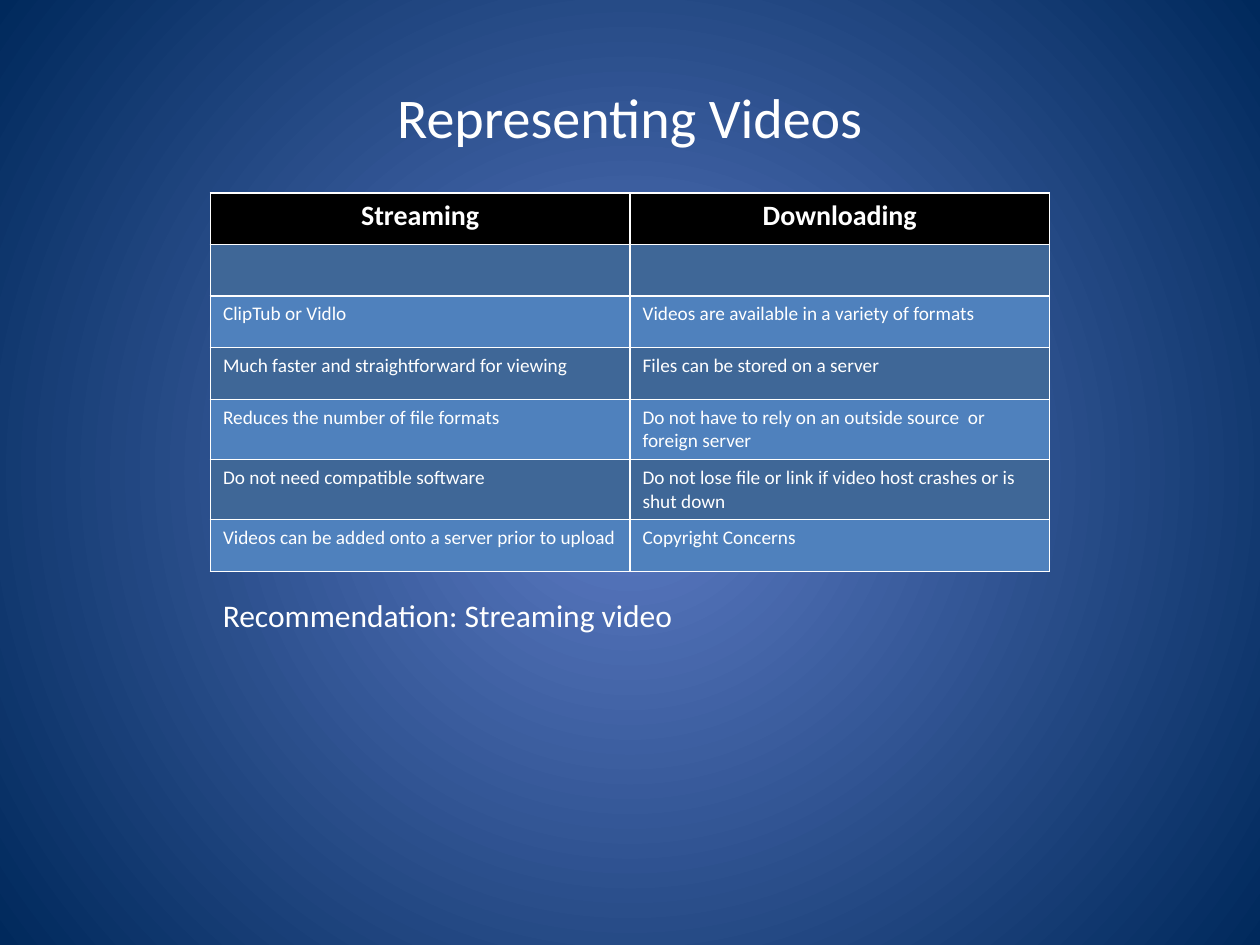
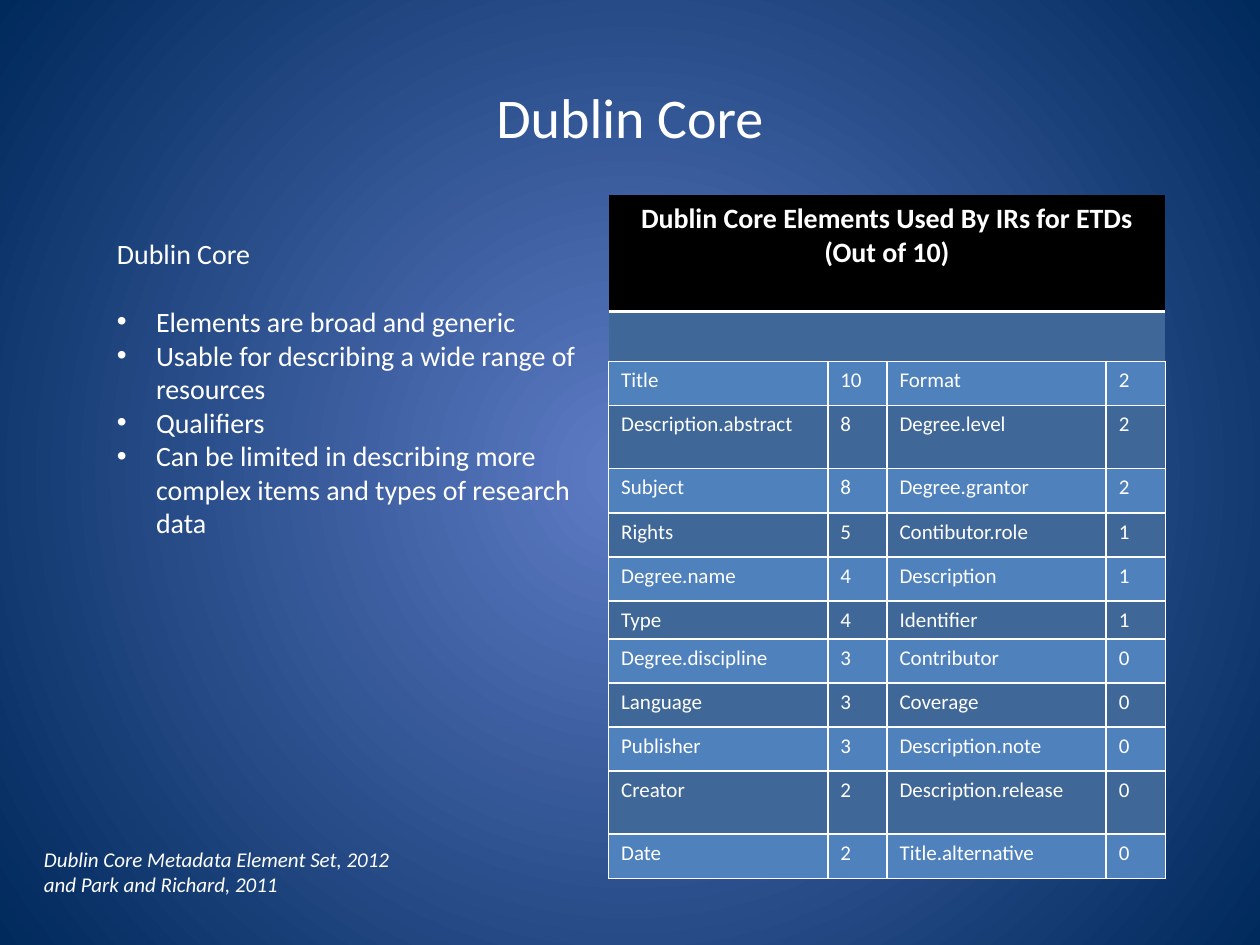
import pptx
import pptx.dml.color
import pptx.enum.text
import pptx.oxml
import pptx.oxml.ns
import pptx.util
from lxml import etree

Inches = pptx.util.Inches
Pt = pptx.util.Pt
RGBColor = pptx.dml.color.RGBColor
qn = pptx.oxml.ns.qn
PP_ALIGN = pptx.enum.text.PP_ALIGN

FONT = "Calibri"
WHITE = RGBColor(0xFF, 0xFF, 0xFF)
HEADER_BLACK = RGBColor(0x00, 0x00, 0x00)
BAND_DARK = RGBColor(0x3F, 0x67, 0x97)
BAND_LIGHT = RGBColor(0x4F, 0x81, 0xBD)
GLOW_CENTRE = RGBColor(0x5E, 0x7C, 0xC5)
GLOW_EDGE = RGBColor(0x00, 0x29, 0x5C)

NO_STYLE = "{2D5ABB26-0587-4C30-8999-92F81FD0307C}"
GRID = {"L": 1, "R": 1, "T": 1, "B": 1}

VIDEO_ROWS = [
    ["Streaming", "Downloading"],
    ["", ""],
    ["ClipTub or Vidlo", "Videos are available in a variety of formats"],
    ["Much faster and straightforward for viewing", "Files can be stored on a server"],
    ["Reduces the number of file formats",
     "Do not have to rely on an outside source  or foreign server"],
    ["Do not need compatible software",
     "Do not lose file or link if video host crashes or is shut down"],
    ["Videos can be added onto a server prior to upload", "Copyright Concerns"],
]

ELEMENT_ROWS = [
    ["Dublin Core Elements Used By IRs for ETDs (Out of 10)", "", "", ""],
    ["", "", "", ""],
    ["Title", "10", "Format", "2"],
    ["Description.abstract", "8", "Degree.level", "2"],
    ["Subject", "8", "Degree.grantor", "2"],
    ["Rights", "5", "Contibutor.role", "1"],
    ["Degree.name", "4", "Description", "1"],
    ["Type", "4", "Identifier", "1"],
    ["Degree.discipline", "3", "Contributor", "0"],
    ["Language", "3", "Coverage", "0"],
    ["Publisher", "3", "Description.note", "0"],
    ["Creator", "2", "Description.release", "0"],
    ["Date", "2", "Title.alternative", "0"],
]
ELEMENT_HEIGHTS = [0.92, 0.37, 0.35, 0.5, 0.35, 0.35, 0.35, 0.28, 0.35, 0.35, 0.35, 0.5, 0.35]

CORE_POINTS = [
    "Elements are broad and generic",
    "Usable for describing a wide range of resources",
    "Qualifiers",
    "Can be limited in describing more complex items and types of research data",
]


def add_run(paragraph, text, size, bold=False, italic=False):
    run = paragraph.add_run()
    run.text = text
    run.font.name = FONT
    run.font.size = Pt(size)
    run.font.bold = bold
    run.font.italic = italic
    run.font.color.rgb = WHITE


def set_background(master):
    """Radial glow shared by every slide."""
    fill = master.background.fill
    fill.gradient()
    for stop, color in zip(fill.gradient_stops, (GLOW_CENTRE, GLOW_EDGE)):
        stop.color.rgb = color
    for stop, position in zip(fill.gradient_stops, (0, 1)):
        stop.position = position
    gradient = master.element.find(".//" + qn("p:bg")).find(".//" + qn("a:gradFill"))
    linear = gradient.find(qn("a:lin"))
    if linear is not None:
        gradient.remove(linear)
    glow = etree.SubElement(gradient, qn("a:path"), {"path": "circle"})
    etree.SubElement(glow, qn("a:fillToRect"), {side: "50000" for side in "ltrb"})


def add_titled_slide(prs, text):
    slide = prs.slides.add_slide(prs.slide_layouts[5])
    title = slide.shapes.title
    title.left, title.top, title.width, title.height = map(Inches, (0.5, 0.3, 9, 1.25))
    title.text_frame.vertical_anchor = pptx.enum.text.MSO_ANCHOR.MIDDLE
    paragraph = title.text_frame.paragraphs[0]
    paragraph.alignment = PP_ALIGN.CENTER
    add_run(paragraph, text, 32)
    return slide


def add_text_frame(slide, box):
    frame = slide.shapes.add_textbox(*map(Inches, box)).text_frame
    frame.word_wrap = True
    frame.auto_size = pptx.enum.text.MSO_AUTO_SIZE.SHAPE_TO_FIT_TEXT
    return frame


def set_borders(cell, widths):
    """White edges of the given point widths; edges not named stay clear."""
    properties = cell._tc.get_or_add_tcPr()
    for side in "LRTB":
        edge = etree.SubElement(properties, qn("a:ln" + side))
        if side in widths:
            edge.set("w", str(Pt(widths[side])))
            paint = etree.SubElement(edge, qn("a:solidFill"))
            etree.SubElement(paint, qn("a:srgbClr"), {"val": str(WHITE)})
        else:
            etree.SubElement(edge, qn("a:noFill"))


def add_banded_table(slide, box, rows, widths, heights, body_size, row_borders=None):
    """Black header, then alternating bands; row_borders overrides the grid by row."""
    table = slide.shapes.add_table(len(rows), len(widths), *map(Inches, box)).table
    table._tbl.tblPr.find(qn("a:tableStyleId")).text = NO_STYLE
    for column, width in zip(table.columns, widths):
        column.width = Inches(width)
    for r, (texts, height) in enumerate(zip(rows, heights)):
        table.rows[r].height = Inches(height)
        is_header = r == 0
        band = HEADER_BLACK if is_header else (BAND_DARK if r % 2 else BAND_LIGHT)
        for c, text in enumerate(texts):
            cell = table.cell(r, c)
            set_borders(cell, (row_borders or {}).get(r, GRID))
            cell.fill.solid()
            cell.fill.fore_color.rgb = band
            if text:
                paragraph = cell.text_frame.paragraphs[0]
                paragraph.alignment = PP_ALIGN.CENTER if is_header else PP_ALIGN.LEFT
                add_run(paragraph, text, 16 if is_header else body_size, bold=is_header)
    return table


def add_core_points(slide, box):
    frame = add_text_frame(slide, box)
    heading = frame.paragraphs[0]
    heading.space_after = Pt(19.5)
    add_run(heading, "Dublin Core", 16)
    for text in CORE_POINTS:
        point = frame.add_paragraph()
        add_run(point, text, 16)
        properties = point._p.get_or_add_pPr()
        properties.set("marL", str(Inches(0.31)))
        properties.set("indent", str(-Inches(0.31)))
        etree.SubElement(properties, qn("a:buFont"), {"typeface": "Arial"})
        etree.SubElement(properties, qn("a:buChar"), {"char": "•"})


def build_videos_slide(prs):
    slide = add_titled_slide(prs, "Representing Videos")
    add_banded_table(slide, (1.67, 1.53, 6.67, 2.96), VIDEO_ROWS,
                     [3.33] * 2, [0.41] * len(VIDEO_ROWS), 11)
    # Recommendation under the table
    recommendation = add_text_frame(slide, (1.67, 4.68, 4.88, 0.4))
    add_run(recommendation.paragraphs[0], "Recommendation: Streaming video", 18)


def build_dublin_core_slide(prs):
    slide = add_titled_slide(prs, "Dublin Core")
    add_core_points(slide, (0.83, 1.83, 3.92, 2.52))
    # Source citation
    citation = add_text_frame(slide, (0.25, 6.67, 3.22, 0.5))
    add_run(citation.paragraphs[0],
            "Dublin Core Metadata Element Set, 2012 and Park and Richard, 2011",
            12, italic=True)
    # Element counts, with one header across all columns
    elements = add_banded_table(slide, (4.83, 1.55, 4.42, 5.46), ELEMENT_ROWS,
                                [1.74, 0.47] * 2, ELEMENT_HEIGHTS, 12,
                                {0: {"B": 2}, 1: {"T": 2, "B": 1}})
    elements.cell(0, 0).merge(elements.cell(0, 3))


def main():
    prs = pptx.Presentation()
    prs.slide_width, prs.slide_height = Inches(10), Inches(7.5)
    set_background(prs.slide_master)
    build_videos_slide(prs)
    build_dublin_core_slide(prs)
    prs.save("out.pptx")


if __name__ == "__main__":
    main()
